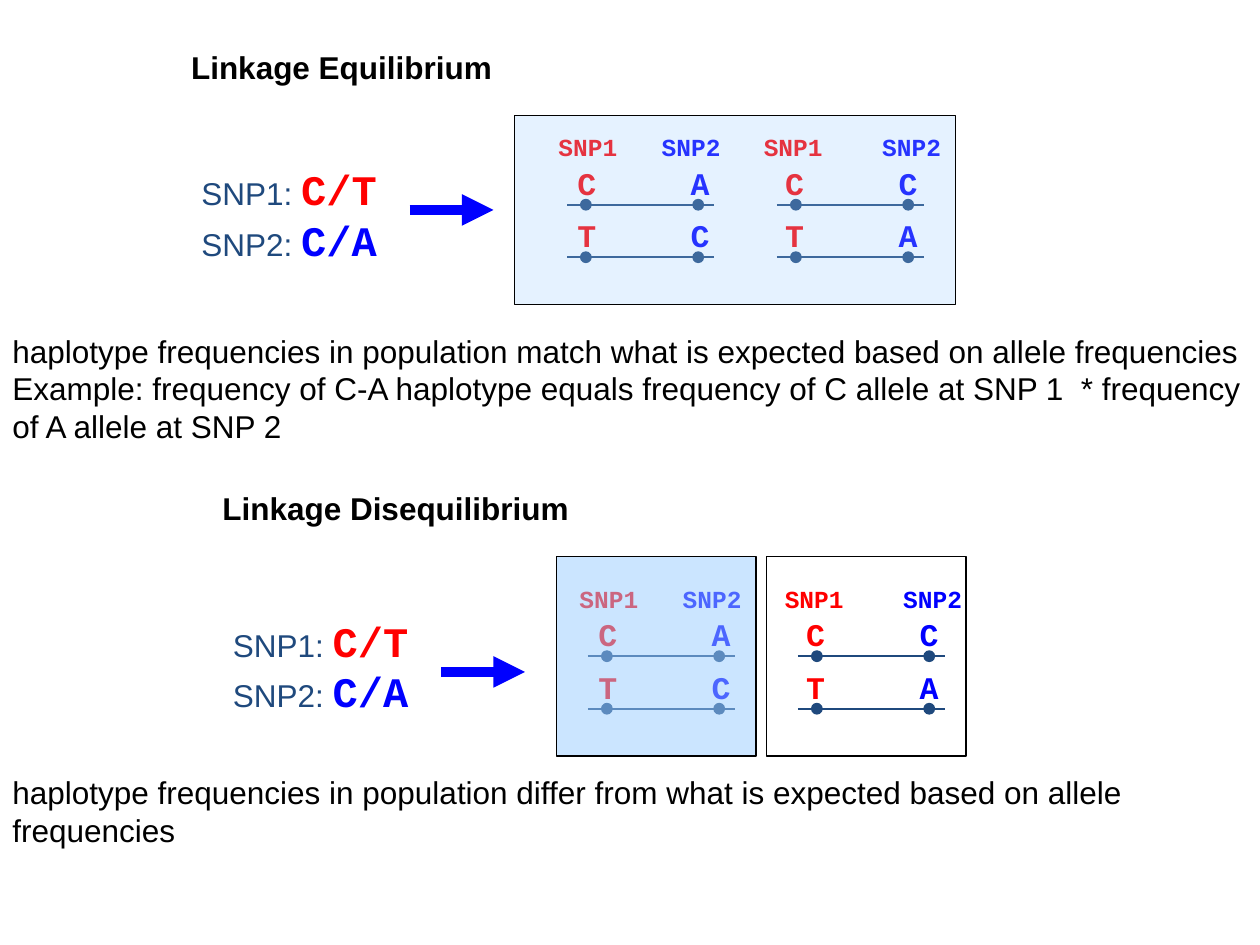
from dataclasses import dataclass

from lxml.etree import SubElement
from pptx import Presentation
from pptx.dml.color import RGBColor
from pptx.enum.shapes import MSO_CONNECTOR, MSO_SHAPE
from pptx.enum.text import MSO_ANCHOR, MSO_AUTO_SIZE, PP_ALIGN
from pptx.oxml.ns import qn
from pptx.util import Inches, Pt


@dataclass(frozen=True)
class Theme:
    """Colours, fonts and type sizes of the slide."""
    ink: str = "000000"
    navy: str = "1F497D"
    first_snp: str = "FF0000"
    second_snp: str = "0000FF"
    tint: str = "99CCFF"
    sans: str = "Arial"
    mono: str = "Courier New"
    label_size: int = 14
    body_size: int = 18
    genotype_size: int = 24


THEME = Theme()
COLUMNS, ROWS = 120, 90
SLIDE_WIDTH, SLIDE_HEIGHT = Inches(10), Inches(7.5)
ALLELE_TABS = (0.9, 1.65, 2.55)
LABEL_TABS = (0.82, 1.63, 2.57)


def place(left, top, width, height):
    """Turn grid columns and rows into slide lengths."""
    across, down = SLIDE_WIDTH / COLUMNS, SLIDE_HEIGHT / ROWS
    return [round(n * unit) for n, unit in
            zip((left, top, width, height), (across, down, across, down))]


def style(run, size, color, font=THEME.sans, bold=False):
    """Format one run of text."""
    run.font.size, run.font.name, run.font.bold = Pt(size), font, bold
    run.font.color.rgb = RGBColor.from_string(color)


def add_text(slide, box, lines):
    """Add a wrapping text box with one paragraph for each line."""
    frame = slide.shapes.add_textbox(*place(*box)).text_frame
    frame.word_wrap = True
    frame.text = "\n".join(lines)
    for paragraph in frame.paragraphs:
        for run in paragraph.runs:
            style(run, THEME.body_size, THEME.ink)
    return frame


def format_heading(frame):
    """Give a heading its bold, left-aligned look."""
    frame.word_wrap = True
    frame.auto_size = MSO_AUTO_SIZE.NONE
    frame.vertical_anchor = MSO_ANCHOR.TOP
    heading = frame.paragraphs[0]
    heading.alignment = PP_ALIGN.LEFT
    style(heading.runs[0], THEME.body_size, THEME.ink, bold=True)


def add_line(slide, left, top, length, color, weight):
    """Add a horizontal line without a shadow."""
    x, y, run_length, _ = place(left, top, length, 0)
    line = slide.shapes.add_connector(MSO_CONNECTOR.STRAIGHT, x, y, x + run_length, y)
    line.line.color.rgb = RGBColor.from_string(color)
    line.line.width = Pt(weight)
    SubElement(line._element.spPr, qn("a:effectLst"))
    return line


def add_arrow(slide, left, top, length):
    """Add the thick arrow from genotypes to haplotypes."""
    arrow = add_line(slide, left, top, length, THEME.second_snp, 6)
    SubElement(arrow.line._get_or_add_ln(), qn("a:tailEnd"), type="triangle")


def add_genotypes(slide, left, top):
    """List the two alleles of each SNP."""
    frame = add_text(slide, (left, top, 24, 10.8), ["SNP1: ", "SNP2: "])
    genotypes = (("C/T", THEME.first_snp), ("C/A", THEME.second_snp))
    for paragraph, (genotype, color) in zip(frame.paragraphs, genotypes):
        style(paragraph.runs[0], THEME.body_size, THEME.navy)
        run = paragraph.add_run()
        run.text = genotype
        style(run, THEME.genotype_size, color, THEME.mono, bold=True)


def add_snp_row(slide, box, words, stops, size):
    """Write one row of alternating SNP entries on tab stops."""
    paragraph = add_text(slide, box, [""]).paragraphs[0]
    tabs = SubElement(paragraph._p.get_or_add_pPr(), qn("a:tabLst"))
    for stop in stops:
        SubElement(tabs, qn("a:tab"), pos=str(Inches(stop)), algn="l")
    for index, word in enumerate(words):
        run = paragraph.add_run()
        run.text = "\t" + word if index else word
        color = THEME.second_snp if index % 2 else THEME.first_snp
        style(run, size, color, THEME.mono, bold=True)


def add_chromosome(slide, left, top):
    """Draw a chromosome with its two SNP positions."""
    add_line(slide, left, top, 14, THEME.navy, 1.25)
    for offset in (1.3, 12):
        site = slide.shapes.add_shape(
            MSO_SHAPE.OVAL, *place(left + offset, top - 0.5, 1, 1))
        site.shadow.inherit = False
        site.fill.solid()
        site.fill.fore_color.rgb = RGBColor.from_string(THEME.navy)
        site.line.color.rgb = RGBColor.from_string(THEME.navy)
        site.line.width = Pt(0.75)


def add_haplotypes(slide, left, top):
    """Draw the four haplotypes under their SNP labels."""
    add_snp_row(slide, (left, top, 39, 4), ["SNP1", "SNP2"] * 2,
                LABEL_TABS, THEME.label_size)
    for row, alleles in enumerate(("CACC", "TCTA")):
        row_top = top + 3 + 5 * row
        add_snp_row(slide, (left + 1.8, row_top, 38, 4.8), alleles,
                    ALLELE_TABS, THEME.body_size)
        for start in (2, 22):
            add_chromosome(slide, left + start, row_top + 4.5)


def add_frame(slide, box, opacity):
    """Frame haplotypes, with a translucent tint if opacity is above zero."""
    frame = slide.shapes.add_shape(MSO_SHAPE.RECTANGLE, *place(*box))
    frame.shadow.inherit = False
    frame.line.color.rgb = RGBColor.from_string(THEME.ink)
    frame.line.width = Pt(0.75)
    if not opacity:
        frame.fill.background()
        return
    frame.fill.solid()
    frame.fill.fore_color.rgb = RGBColor.from_string(THEME.tint)
    tint = frame.fill._xPr.find(qn("a:solidFill"))[0]
    SubElement(tint, qn("a:alpha"), val=str(opacity * 1000))


def add_section(slide, left, top, arrow_row, frames):
    """Place genotypes, arrow and framed haplotypes of one case."""
    add_haplotypes(slide, left, top)
    for box, opacity in frames:
        add_frame(slide, box, opacity)
    add_arrow(slide, *arrow_row)


def main():
    """Build and save the slide."""
    deck = Presentation()
    deck.slide_width, deck.slide_height = SLIDE_WIDTH, SLIDE_HEIGHT
    slide = deck.slides.add_slide(deck.slide_layouts[5])

    title = slide.shapes.title
    title.left, title.top, title.width, title.height = place(17, 4, 68, 4.8)
    title.text_frame.text = "Linkage Equilibrium"
    format_heading(title.text_frame)
    add_genotypes(slide, 18, 15)
    add_section(slide, 52, 12, (39, 20, 8), [((49, 11, 42, 18), 25)])
    add_text(slide, (0, 31, COLUMNS, 12), [
        "haplotype frequencies in population match what is expected based on allele frequencies",
        "Example: frequency of C-A haplotype equals frequency of C allele at SNP 1  * frequency "
        "of A allele at SNP 2"])

    format_heading(add_text(slide, (20, 46, 68, 4.8), ["Linkage Disequilibrium"]))
    add_genotypes(slide, 21, 58)
    add_section(slide, 54, 55, (42, 64, 8),
                [((53, 53, 19, 19), 50), ((73, 53, 19, 19), 0)])
    add_text(slide, (0, 73, COLUMNS, 8.5), [
        "haplotype frequencies in population differ from what is expected based on allele "
        "frequencies"])
    deck.save("out.pptx")


if __name__ == "__main__":
    main()
